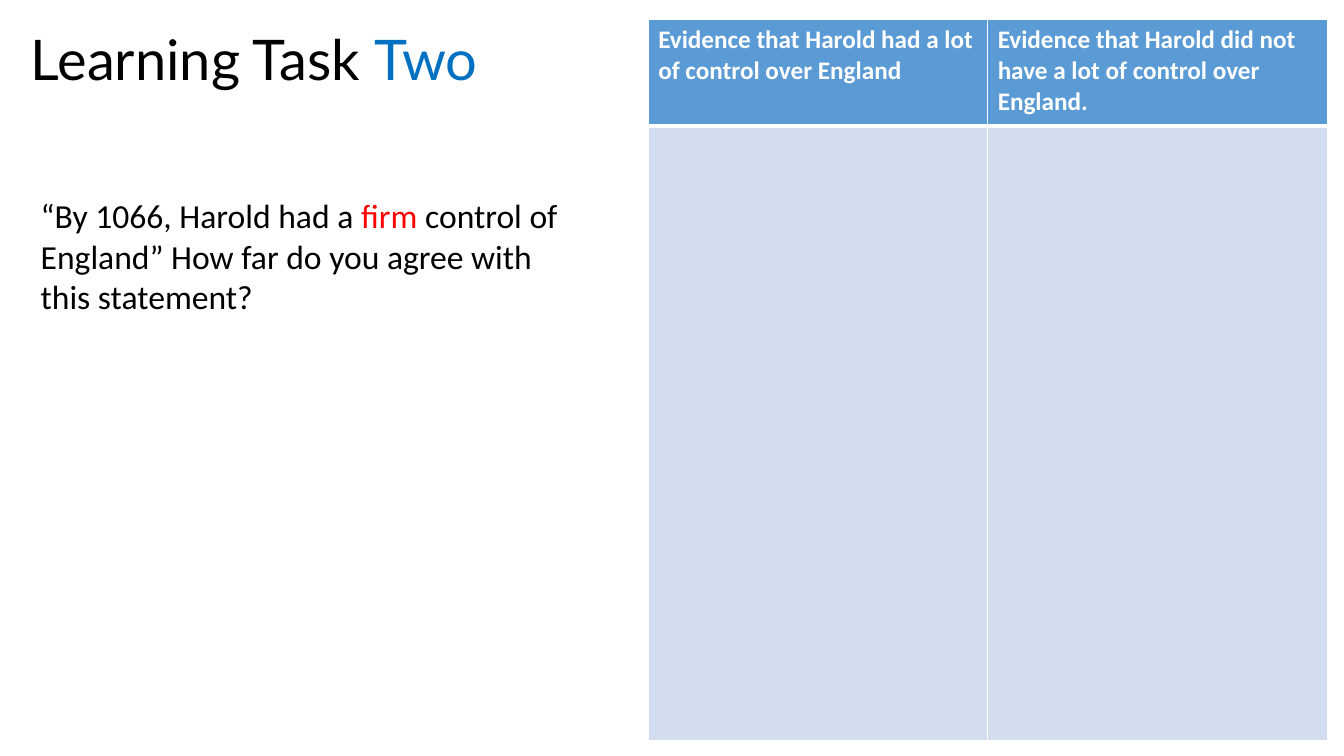
from lxml.etree import SubElement
from pptx import Presentation
from pptx.dml.color import RGBColor
from pptx.enum.text import MSO_AUTO_SIZE as AutoSize
from pptx.oxml.ns import qn
from pptx.util import Pt


def color(value):
    return RGBColor.from_string(value)


class TaskSlide:
    """Hold the colours and the current slide, and add elements to it."""

    black, white = "000000", "FFFFFF"
    blue, red = "0070C0", "FF0000"
    header_fill, body_fill = "5B9BD5", "D2DEEF"

    def __init__(self, deck):
        self.page = deck.slides.add_slide(deck.slide_layouts[6])

    def text(self, left, top, width, height, spans, font, size):
        box = self.page.shapes.add_textbox(Pt(left), Pt(top), Pt(width), Pt(height))
        frame = box.text_frame
        frame.word_wrap = True
        frame.auto_size = AutoSize.SHAPE_TO_FIT_TEXT
        para = frame.paragraphs[0]
        para.font.name = font
        para.font.size = Pt(size)
        for words, shade in spans:
            span = para.add_run()
            span.text = words
            span.font.color.rgb = color(shade)

    def border(self, cell, side, width):
        properties = cell._tc.get_or_add_tcPr()
        line = SubElement(properties, qn(f"a:ln{side}"), w=str(Pt(width)))
        fill = SubElement(line, qn("a:solidFill"))
        SubElement(fill, qn("a:srgbClr"), val=self.white)

    def cell(self, cell, words, fill, top, bottom):
        for side, width in (("L", 1), ("R", 1), ("T", top), ("B", bottom)):
            self.border(cell, side, width)
        cell.fill.solid()
        cell.fill.fore_color.rgb = color(fill)
        cell.text = words
        font = cell.text_frame.paragraphs[0].font
        font.name = "Calibri"
        font.size = Pt(18)
        if words:
            font.bold = True
            font.color.rgb = color(self.white)

    def evidence_table(self, left, top, width, heights, headings):
        frame = self.page.shapes.add_table(
            2, len(headings), Pt(left), Pt(top), Pt(width), Pt(sum(heights))
        )
        table = frame.table
        for row, height in zip(table.rows, heights):
            row.height = Pt(height)
        for index, heading in enumerate(headings):
            table.columns[index].width = Pt(width / len(headings))
            self.cell(table.cell(0, index), heading, self.header_fill, 1, 3)
            self.cell(table.cell(1, index), "", self.body_fill, 3, 1)


def main():
    deck = Presentation()
    deck.slide_width, deck.slide_height = Pt(960), Pt(540)
    slide = TaskSlide(deck)
    slide.text(
        15, 13.7, 440, 55.4,
        [("Learning Task ", slide.black), ("Two", slide.blue)],
        "Lato", 40,
    )
    slide.text(
        22, 136, 402, 94.3,
        [
            ("“By 1066, Harold had a ", slide.black),
            ("firm", slide.red),
            (" control of England” How far do you agree with this statement?", slide.black),
        ],
        "Calibri", 24,
    )
    slide.evidence_table(
        463, 14, 485, (76, 439),
        (
            "Evidence that Harold had a lot of control over England",
            "Evidence that Harold did not have a lot of control over England.",
        ),
    )
    deck.save("out.pptx")


if __name__ == "__main__":
    main()
